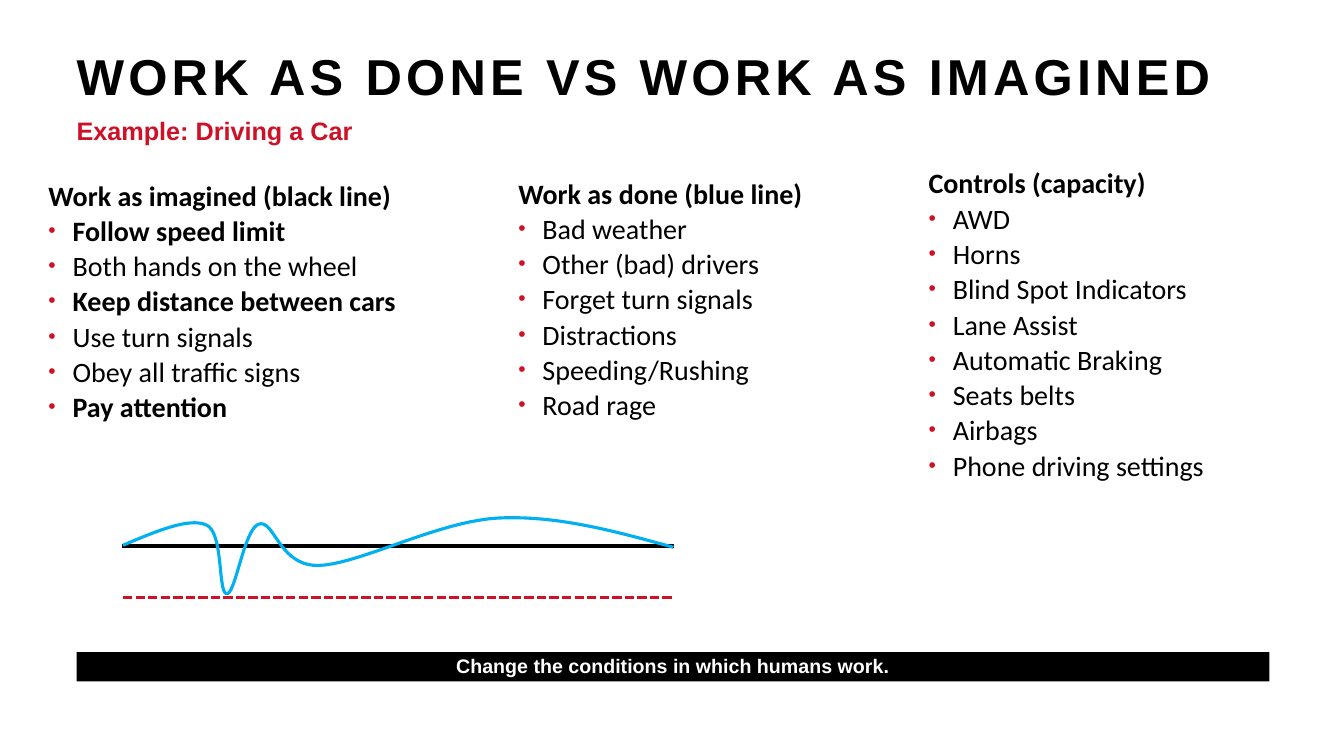
import pptx
import pptx.dml.color
import pptx.enum.dml
import pptx.enum.shapes
import pptx.enum.text
import pptx.oxml
import pptx.oxml.ns
import pptx.util
from dataclasses import dataclass

PX = 9144  # EMU per px, 100 px to the inch
ALIGN = pptx.enum.text.PP_ALIGN
ANCHOR = pptx.enum.text.MSO_ANCHOR


@dataclass(frozen=True)
class Theme:
    black: str = "000000"
    white: str = "FFFFFF"
    red: str = "CE1126"
    blue: str = "00B0F0"
    heading_font: str = "Arial"
    list_font: str = "Calibri"
    title_size: int = 36
    subtitle_size: int = 18
    list_size: int = 20
    message_size: int = 14


THEME = Theme()

# Each item is its text and whether it is bold
IMAGINED = [
    ("Work as imagined (black line)", True),
    ("Follow speed limit", True),
    ("Both hands on the wheel", False),
    ("Keep distance between cars", True),
    ("Use turn signals", False),
    ("Obey all traffic signs", False),
    ("Pay attention", True),
]
DONE = [
    ("Work as done (blue line)", True),
    ("Bad weather", False),
    ("Other (bad) drivers", False),
    ("Forget turn signals", False),
    ("Distractions", False),
    ("Speeding/Rushing", False),
    ("Road rage", False),
]
CONTROLS = [
    ("Controls (capacity)", True),
    ("AWD", False),
    ("Horns", False),
    ("Blind Spot Indicators", False),
    ("Lane Assist", False),
    ("Automatic Braking", False),
    ("Seats belts", False),
    ("Airbags", False),
    ("Phone driving settings", False),
]

# Work as done: start point, then two control points and an end per curve
DONE_START = (122, 541)
DONE_CURVES = [
    ((155, 527), (188, 513), (205, 521)),
    ((222, 529), (216, 589), (225, 589)),
    ((234, 589), (242, 524), (257, 520)),
    ((272, 515), (277, 562), (316, 561)),
    ((356, 560), (435, 517), (494, 514)),
    ((552, 511), (610, 527), (668, 543)),
]


def rgb(color):
    return pptx.dml.color.RGBColor.from_string(color)


def place(shape, left, top, width, height):
    shape.left, shape.top = left * PX, top * PX
    shape.width, shape.height = width * PX, height * PX


def set_frame(shape, margins=(0, 0, 0, 0), anchor=ANCHOR.TOP):
    frame = shape.text_frame
    frame.word_wrap = True
    frame.auto_size = pptx.enum.text.MSO_AUTO_SIZE.NONE
    frame.vertical_anchor = anchor
    (frame.margin_left, frame.margin_top,
     frame.margin_right, frame.margin_bottom) = [m * PX for m in margins]
    return frame


def set_bullet(paragraph, bulleted):
    properties = paragraph._p.get_or_add_pPr()
    indent = 24 * PX if bulleted else 0
    properties.set("marL", str(indent))
    properties.set("indent", str(-indent))
    marks = ['<a:buNone {ns}/>']
    if bulleted:
        marks = [f'<a:buClr {{ns}}><a:srgbClr val="{THEME.red}"/></a:buClr>',
                 '<a:buSzPct {ns} val="75000"/>',
                 '<a:buFont {ns} typeface="Arial"/>',
                 '<a:buChar {ns} char="•"/>']
    for mark in marks:
        properties.append(pptx.oxml.parse_xml(mark.format(ns=pptx.oxml.ns.nsdecls("a"))))


def style(paragraph, font, size, color, bold, spacing, align=ALIGN.LEFT):
    paragraph.alignment = align
    paragraph.line_spacing = spacing
    paragraph.space_before = paragraph.space_after = pptx.util.Pt(0)
    for run in paragraph.runs:
        run.font.name = font
        run.font.size = pptx.util.Pt(size)
        run.font.bold = bold
        run.font.color.rgb = rgb(color)


def add_heading(shape, box, text, size, color, spacing, align=ALIGN.LEFT, **frame):
    place(shape, *box)
    paragraph = set_frame(shape, **frame).paragraphs[0]
    paragraph.text = text
    set_bullet(paragraph, False)
    style(paragraph, THEME.heading_font, size, color, True, spacing, align)
    return paragraph.runs[0]


def add_list(shape, box, items):
    place(shape, *box)
    frame = set_frame(shape)
    frame.text = "\n".join(text for text, _ in items)
    for row, (paragraph, (_, bold)) in enumerate(zip(frame.paragraphs, items)):
        set_bullet(paragraph, row > 0)
        style(paragraph, THEME.list_font, THEME.list_size, THEME.black, bold, 1.05)


def set_line(shape, color, width):
    shape.line.color.rgb = rgb(color)
    shape.line.width = pptx.util.Pt(width)


def add_level(slide, left, right, y, color, width):
    level = slide.shapes.add_connector(pptx.enum.shapes.MSO_CONNECTOR.STRAIGHT,
                                       left * PX, y * PX, right * PX, y * PX)
    set_line(level, color, width)
    level._element.spPr.append(
        pptx.oxml.parse_xml(f'<a:effectLst {pptx.oxml.ns.nsdecls("a")}/>'))
    return level


def curve_points(start, curves, steps=20):
    for first, second, end in curves:
        for step in range(1, steps + 1):
            t = step / steps
            yield tuple(
                round(PX * ((1 - t) ** 3 * a + 3 * (1 - t) ** 2 * t * b
                            + 3 * (1 - t) * t ** 2 * c + t ** 3 * d))
                for a, b, c, d in zip(start, first, second, end))
        start = end


def add_curve(slide, start, curves, color, width):
    builder = slide.shapes.build_freeform(start[0] * PX, start[1] * PX)
    builder.add_line_segments(list(curve_points(start, curves)), close=False)
    curve = builder.convert_to_shape()
    curve.fill.background()
    curve.shadow.inherit = False
    set_line(curve, color, width)


def main():
    deck = pptx.Presentation()
    deck.slide_width, deck.slide_height = 1333 * PX, 750 * PX
    slide = deck.slides.add_slide(deck.slide_layouts.get_by_name("Comparison"))
    subtitle, imagined, message, done = [slide.placeholders[i] for i in (1, 2, 3, 4)]

    # Title and subtitle
    title_run = add_heading(slide.shapes.title, (76, 56, 1182, 46),
                            "WORK AS DONE VS WORK AS IMAGINED",
                            THEME.title_size, THEME.black, 0.8)
    title_run._r.get_or_add_rPr().set("spc", "300")
    add_heading(subtitle, (76, 118, 1183, 37), "Example: Driving a Car",
                THEME.subtitle_size, THEME.red, 0.9, margins=(0, 0, 0, 10))

    # Three lists
    add_list(imagined, (48, 175, 367, 292), IMAGINED)
    add_list(done, (514, 173, 308, 292), DONE)
    add_list(slide.shapes.add_textbox(0, 0, 0, 0), (921, 163, 308, 336), CONTROLS)

    # Work as imagined, work as done and the limit
    add_level(slide, 121, 668, 542, THEME.black, 3)
    add_curve(slide, DONE_START, DONE_CURVES, THEME.blue, 2.25)
    limit = add_level(slide, 122, 668, 593, THEME.red, 2.25)
    limit.line.dash_style = pptx.enum.dml.MSO_LINE.SQUARE_DOT

    # Closing message
    add_heading(message, (76, 647, 1183, 29),
                "Change the conditions in which humans work.",
                THEME.message_size, THEME.white, pptx.util.Pt(13), ALIGN.CENTER,
                margins=(68, 7, 68, 4), anchor=ANCHOR.BOTTOM)
    message.fill.solid()
    message.fill.fore_color.rgb = rgb(THEME.black)

    deck.save("out.pptx")


if __name__ == "__main__":
    main()
